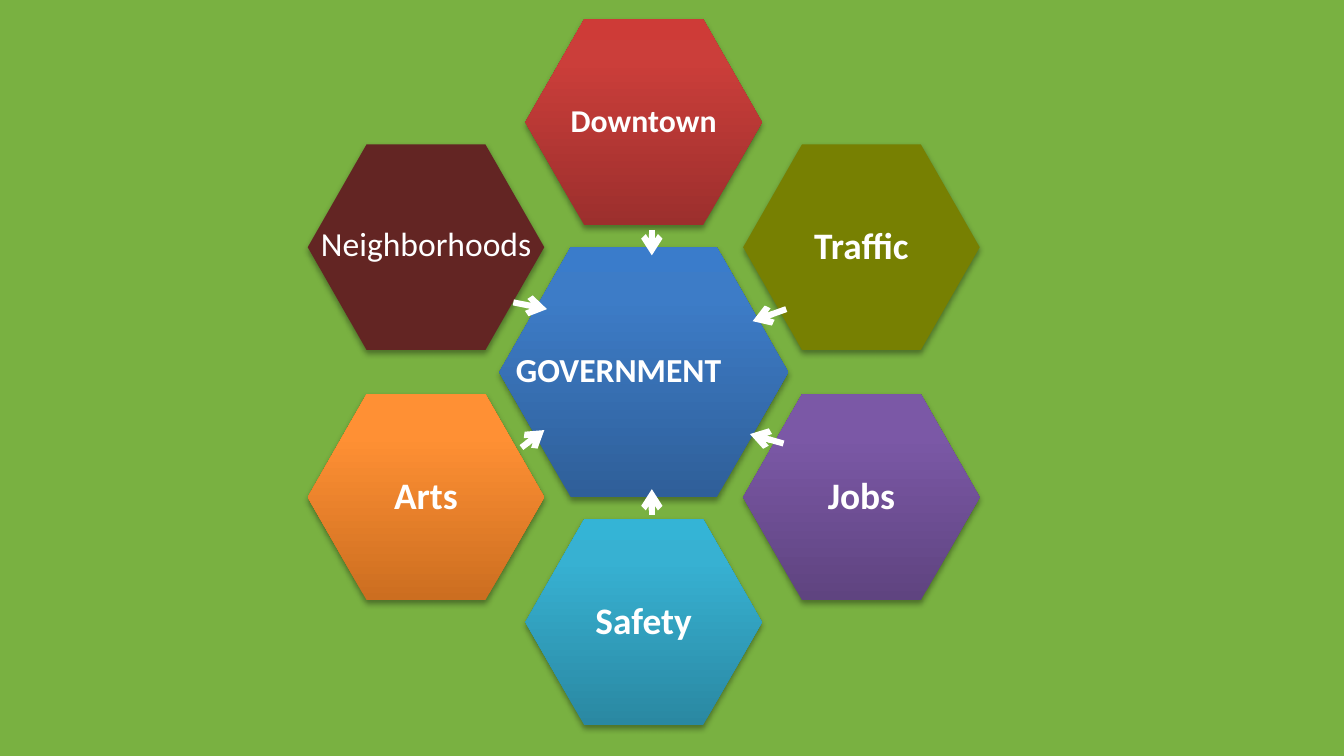
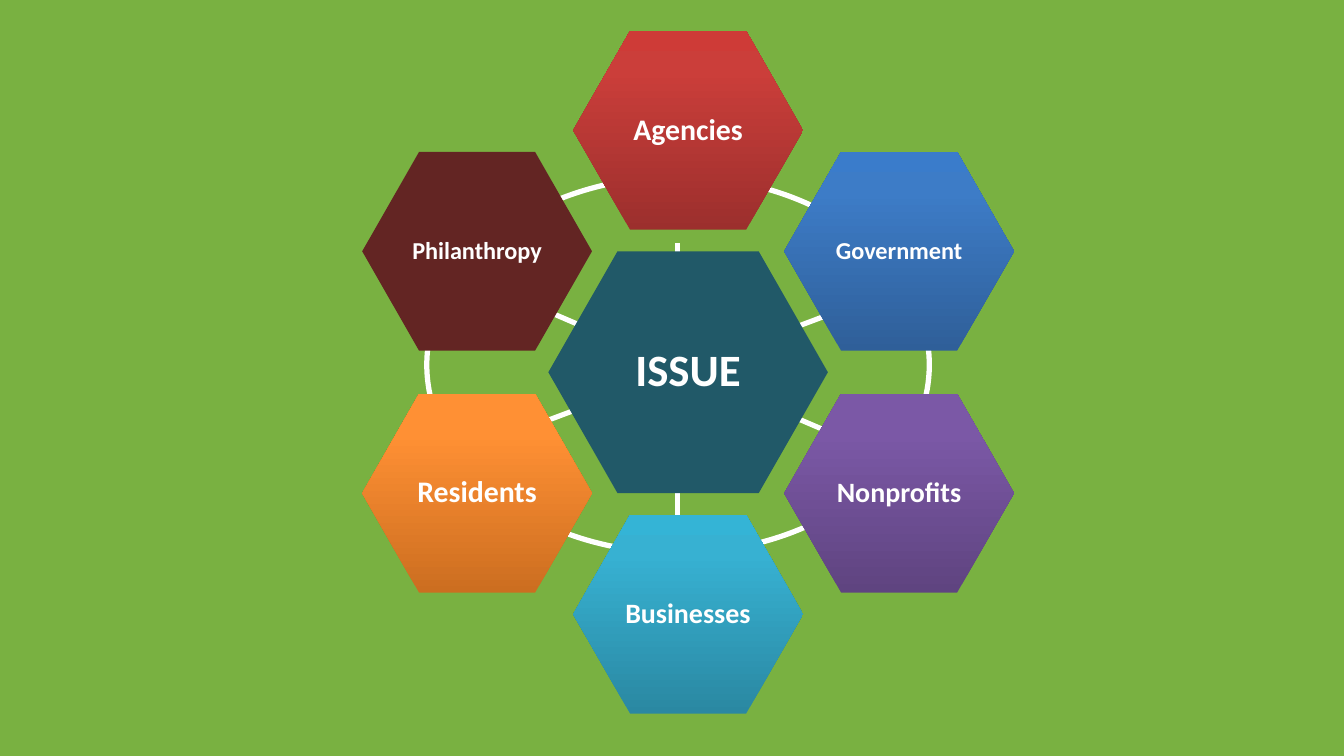
from copy import deepcopy
from typing import NamedTuple

from lxml.etree import SubElement
from pptx import Presentation
from pptx.dml.color import RGBColor
from pptx.enum.shapes import MSO_CONNECTOR as Link, MSO_SHAPE as Form
from pptx.enum.text import MSO_ANCHOR as Anchor, MSO_AUTO_SIZE as Fit, PP_ALIGN as Align
from pptx.oxml.ns import qn
from pptx.util import Inches, Pt

FONT = "Calibri"
GREEN, WHITE = "79B141", "FFFFFF"
MAROON, OLIVE, TEAL = ("632523",), ("778002",), ("215968",)
# Gradients run from the bottom up.
RED = ("9C2F2D", "CB3E3A", "CE3B37")
BLUE = ("2F5F99", "3D7CC7", "3A7CCB")
PURPLE = ("5F4480", "7B58A6", "7C57A8")
AQUA = ("2A88A2", "37B1D2", "34B4D6")
ORANGE = ("CC6E20", "FF9034", "FF9136")
STOPS = (0, 0.8, 1)

# Clockwise from the top, in steps from the centre of the ring.
RING = ((0, -2), (1, -1), (1, 1), (0, 2), (-1, 1), (-1, -1))


class Tile(NamedTuple):
    label: str
    size: int
    fill: tuple[str, ...]


class Wheel(NamedTuple):
    x: float
    y: float
    dx: float
    dy: float
    hub: tuple[float, float]
    cell: tuple[float, float]
    shade: bool


class Ray(NamedTuple):
    x1: float
    y1: float
    x2: float
    y2: float


CITY = Wheel(4.79, 2.77, 1.62, 0.93, (2.15, 1.86), (1.76, 1.53), True)
CITY_HUB = Tile("", 18, BLUE)
CITY_TILES = (
    Tile("Downtown", 17, RED),
    Tile("Traffic", 20, OLIVE),
    Tile("Jobs", 20, PURPLE),
    Tile("Safety", 20, AQUA),
    Tile("Arts", 20, ORANGE),
    Tile("", 18, MAROON),
)
ARROWS = (
    Ray(3.88, 3.33, 4.05, 3.2),
    Ray(4.85, 3.83, 4.85, 3.64),
    Ray(5.83, 3.3, 5.58, 3.23),
    Ray(5.85, 2.3, 5.6, 2.39),
    Ray(4.85, 1.71, 4.85, 1.9),
    Ray(3.82, 2.25, 4.07, 2.3),
)

ISSUE = Wheel(5.12, 2.77, 1.57, 0.9, (2.08, 1.8), (1.71, 1.48), False)
ISSUE_HUB = Tile("ISSUE", 24, TEAL)
ISSUE_TILES = (
    Tile("Agencies", 16, RED),
    Tile("Government", 13, BLUE),
    Tile("Nonprofits", 15, PURPLE),
    Tile("Businesses", 15, AQUA),
    Tile("Residents", 16, ORANGE),
    Tile("Philanthropy", 13, MAROON),
)
SPOKES = (
    Ray(3.75, 3.25, 6.25, 2.31),
    Ray(3.92, 2.25, 6.25, 3.25),
    Ray(5.04, 1.81, 5.04, 3.88),
)


def tint(code: str) -> RGBColor:
    return RGBColor.from_string(code)


def page(deck):
    slide = deck.slides.add_slide(deck.slide_layouts[6])
    fill = slide.background.fill
    fill.solid()
    fill.fore_color.rgb = tint(GREEN)
    return slide


def write(slide, text: str, x: float, y: float, w: float, h: float, *,
          size: int, bold: bool = True, tight: bool = False) -> None:
    """Add a label; a tight one is centred and wraps in its box."""
    box = slide.shapes.add_textbox(Inches(x), Inches(y), Inches(w), Inches(h))
    frame = box.text_frame
    frame.word_wrap = tight
    para = frame.paragraphs[0]
    if tight:
        frame.vertical_anchor = Anchor.MIDDLE
        frame.margin_left = frame.margin_right = Inches(0.03)
        frame.margin_top = frame.margin_bottom = Inches(0.03)
        para.alignment = Align.CENTER
        para.line_spacing = 0.9
    else:
        frame.auto_size = Fit.SHAPE_TO_FIT_TEXT
    run = para.add_run()
    run.text = text
    font = run.font
    font.name, font.size, font.bold = FONT, Pt(size), bold
    font.color.rgb = tint(WHITE)


def paint(shape, tones: tuple[str, ...]) -> None:
    """Fill with one flat colour, or with three as a gradient."""
    fill = shape.fill
    if len(tones) == 1:
        fill.solid()
        fill.fore_color.rgb = tint(tones[0])
        return
    fill.gradient()
    fill.gradient_angle = 90
    stops = shape._element.spPr.find(".//" + qn("a:gsLst"))
    stops.insert(1, deepcopy(stops[0]))
    for stop, place, tone in zip(fill.gradient_stops, STOPS, tones):
        stop.position = place
        stop.color.rgb = tint(tone)


def cast(shape) -> None:
    """Give the shape a soft shadow below it."""
    effects = shape._element.spPr.find(qn("a:effectLst"))
    shadow = SubElement(effects, qn("a:outerShdw"), blurRad=str(Pt(3.1)),
                        dist=str(Pt(1.8)), dir="5400000", rotWithShape="0")
    black = SubElement(shadow, qn("a:srgbClr"), val="000000")
    SubElement(black, qn("a:alpha"), val="35000")


def hexagon(slide, tile: Tile, x: float, y: float,
            size: tuple[float, float], shade: bool) -> None:
    """Draw a tile centred on x, y, with its label in the middle two thirds."""
    w, h = size
    shape = slide.shapes.add_shape(Form.HEXAGON, Inches(x - w / 2), Inches(y - h / 2),
                                   Inches(w), Inches(h))
    shape.adjustments[0] = 0.286
    shape.line.fill.background()
    paint(shape, tile.fill)
    shape.shadow.inherit = False
    if shade:
        cast(shape)
    if tile.label:
        write(slide, tile.label, x - w / 3, y - h / 3, w * 2 / 3, h * 2 / 3,
              size=tile.size, tight=True)


def spin(slide, wheel: Wheel, hub: Tile, tiles: tuple[Tile, ...]) -> None:
    """Draw the hub and the ring of tiles around it."""
    hexagon(slide, hub, wheel.x, wheel.y, wheel.hub, wheel.shade)
    for tile, (col, row) in zip(tiles, RING):
        hexagon(slide, tile, wheel.x + col * wheel.dx, wheel.y + row * wheel.dy,
                wheel.cell, wheel.shade)


def draw(slide, ray: Ray, width: float, head: bool = False) -> None:
    line = slide.shapes.add_connector(Link.STRAIGHT, *map(Inches, ray))
    line.line.color.rgb = tint(WHITE)
    line.line.width = Pt(width)
    if head:
        SubElement(line.line._get_or_add_ln(), qn("a:tailEnd"), type="arrow")
    SubElement(line._element.spPr, qn("a:effectLst"))


def circle(slide) -> None:
    ring = slide.shapes.add_shape(Form.DONUT, Inches(3.17), Inches(1.31),
                                  Inches(3.75), Inches(2.81))
    ring.adjustments[0] = 0.004
    paint(ring, (WHITE,))
    ring.line.color.rgb = tint(WHITE)
    ring.line.width = Pt(2)
    ring.shadow.inherit = False


def main() -> None:
    deck = Presentation()
    deck.slide_width = Inches(10)
    deck.slide_height = Inches(10) * 9 // 16

    city = page(deck)
    spin(city, CITY, CITY_HUB, CITY_TILES)
    for ray in ARROWS:
        draw(city, ray, 3.25, head=True)
    write(city, "GOVERNMENT", 3.74, 2.55, 2.12, 0.4, size=18)
    write(city, "Neighborhoods", 2.29, 1.61, 1.8, 0.4, size=18, bold=False)

    issue = page(deck)
    for ray in SPOKES:
        draw(issue, ray, 2.75)
    circle(issue)
    spin(issue, ISSUE, ISSUE_HUB, ISSUE_TILES)

    deck.save("out.pptx")


if __name__ == "__main__":
    main()
